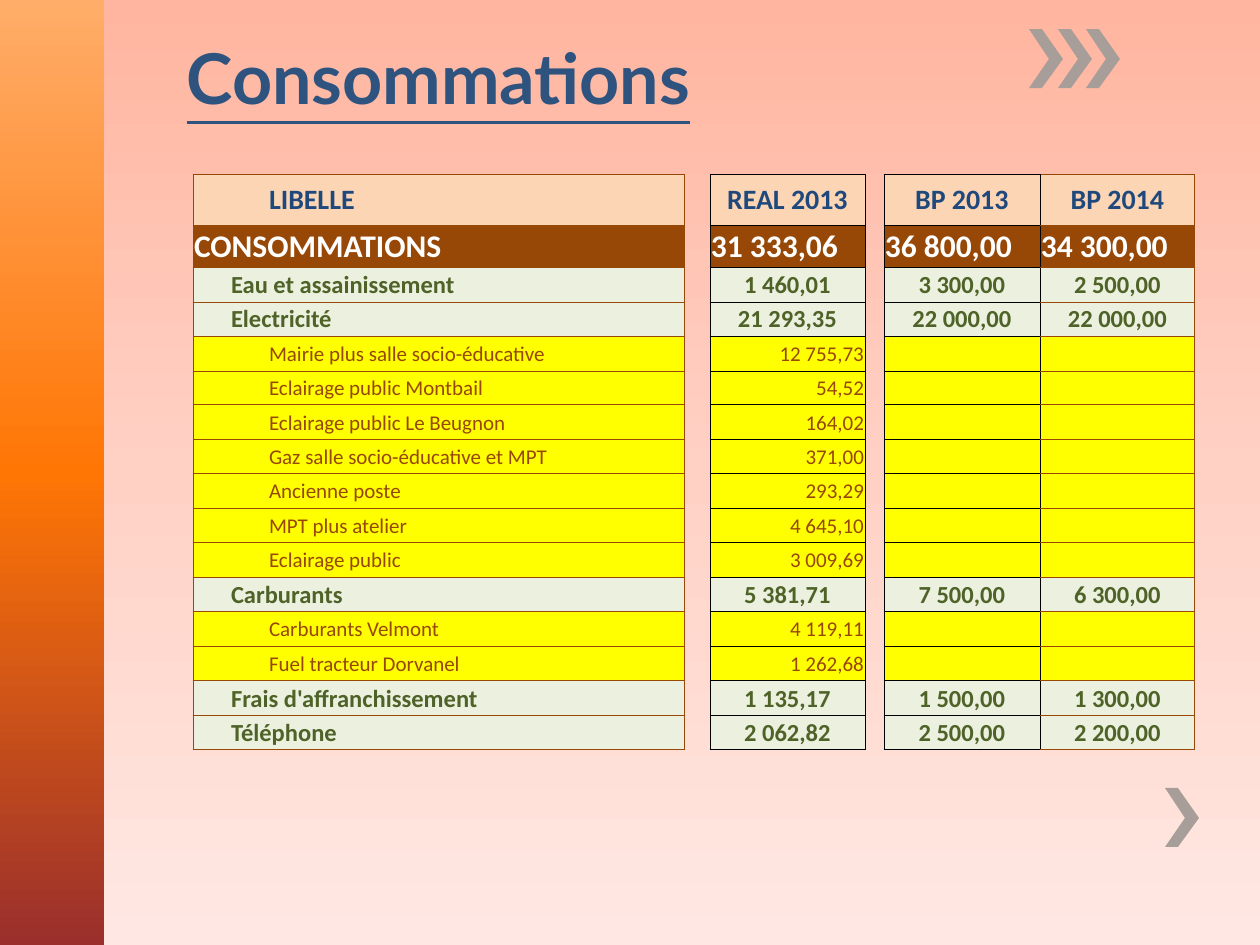
from dataclasses import dataclass

from lxml import etree
from pptx import Presentation
from pptx import util as u
from pptx.dml.color import RGBColor
from pptx.enum import shapes, text
from pptx.oxml.ns import qn

SCALE = 914400 / 126  # EMU in one px
LEFT, CENTER, RIGHT = text.PP_ALIGN.LEFT, text.PP_ALIGN.CENTER, text.PP_ALIGN.RIGHT


@dataclass(frozen=True)
class RowStyle:
    fill: str
    color: str
    size: int
    bold: bool
    indent: int
    align: text.PP_ALIGN


class Theme:
    title_font, table_font = "Lato", "Calibri"
    title_size, title_color = 40, "2F537F"
    background = ("FFB5A0", "FFD1C5", "FFE8E3")
    band = ("FFAD69", "FF7605", "9A2F2C")
    chevron = "A79D99"
    brown, black = "974706", "000000"
    border_width = 0.5
    rows = {
        "header": RowStyle("FCD5B4", "1F497D", 16, True, 76, CENTER),
        "total": RowStyle("974706", "FFFFFF", 18, True, 1, LEFT),
        "group": RowStyle("EBF1DE", "4F6228", 14, True, 38, CENTER),
        "detail": RowStyle("FFFF00", "974706", 12, False, 76, RIGHT),
    }


ROWS = [
    ("header", "LIBELLE", "REAL 2013", "BP 2013", "BP 2014"),
    ("total", "CONSOMMATIONS", "31 333,06", "36 800,00", "34 300,00"),
    ("group", "Eau et assainissement", "1 460,01", "3 300,00", "2 500,00"),
    ("group", "Electricité", "21 293,35", "22 000,00", "22 000,00"),
    ("detail", "Mairie plus salle socio-éducative", "12 755,73", "", ""),
    ("detail", "Eclairage public Montbail", "54,52", "", ""),
    ("detail", "Eclairage public Le Beugnon", "164,02", "", ""),
    ("detail", "Gaz salle socio-éducative et MPT", "371,00", "", ""),
    ("detail", "Ancienne poste", "293,29", "", ""),
    ("detail", "MPT plus atelier", "4 645,10", "", ""),
    ("detail", "Eclairage public", "3 009,69", "", ""),
    ("group", "Carburants", "5 381,71", "7 500,00", "6 300,00"),
    ("detail", "Carburants Velmont", "4 119,11", "", ""),
    ("detail", "Fuel tracteur Dorvanel", "1 262,68", "", ""),
    ("group", "Frais d'affranchissement", "1 135,17", "1 500,00", "1 300,00"),
    ("group", "Téléphone", "2 062,82", "2 500,00", "2 200,00"),
]
COLUMN_WIDTHS = [491, 26, 155, 19, 156, 155]
ROW_HEIGHTS = [51, 42] + [35, 34] * 7

# Border colours of each column: left, right, top, bottom
BROWN, BLACK = Theme.brown, Theme.black
COLUMN_BORDERS = [
    (BROWN,) * 4,
    (BROWN, BLACK, None, None),
    (BLACK,) * 4,
    (BLACK, BLACK, None, None),
    (BLACK,) * 4,
    (BLACK, BROWN, BROWN, BROWN),
]


def px(*lengths):
    return [u.Emu(round(length * SCALE)) for length in lengths]


class SlideBuilder:
    def __init__(self, presentation, theme):
        self.theme = theme
        self.slide = presentation.slides.add_slide(presentation.slide_layouts[5])

    def gradient(self, fill, element, colors):
        """Vertical gradient with evenly spaced stops."""
        fill.gradient()
        fill.gradient_angle = 270
        stops = element.find(".//" + qn("a:gsLst"))
        for stop in list(stops):
            stops.remove(stop)
        for index, color in enumerate(colors):
            position = index * 100000 // (len(colors) - 1)
            stop = etree.SubElement(stops, qn("a:gs"), pos=str(position))
            etree.SubElement(stop, qn("a:srgbClr"), val=color)

    def background(self, colors):
        self.gradient(self.slide.background.fill, self.slide.element, colors)

    def band(self, width, height):
        shape = self.slide.shapes.add_shape(
            shapes.MSO_SHAPE.RECTANGLE, *px(0, 0, width, height))
        shape.shadow.inherit = False
        shape.line.fill.background()
        self.gradient(shape.fill, shape.element, self.theme.band)

    def chevron(self, left, top):
        corners = [(13, 0), (0, 0), (20, 30), (0, 59), (13, 59), (34, 30)]
        points = [px(left + x, top + y) for x, y in corners]
        outline = self.slide.shapes.build_freeform(*points[0])
        outline.add_line_segments(points[1:], close=True)
        shape = outline.convert_to_shape()
        shape.shadow.inherit = False
        shape.line.fill.background()
        shape.fill.solid()
        shape.fill.fore_color.rgb = RGBColor.from_string(self.theme.chevron)

    def format_run(self, run, font, size, color, bold):
        run.font.name, run.font.size, run.font.bold = font, u.Pt(size), bold
        run.font.color.rgb = RGBColor.from_string(color)

    def title(self, wording, left, top, width, height):
        shape = self.slide.shapes.title
        shape.left, shape.top, shape.width, shape.height = px(left, top, width, height)
        frame = shape.text_frame
        frame.text = wording
        frame.auto_size = text.MSO_AUTO_SIZE.NONE
        frame.vertical_anchor = text.MSO_ANCHOR.TOP
        paragraph = frame.paragraphs[0]
        paragraph.alignment = LEFT
        run = paragraph.runs[0]
        theme = self.theme
        self.format_run(run, theme.title_font, theme.title_size, theme.title_color, True)
        run.font.underline = True

    def borders(self, cell, colors):
        properties = cell._tc.get_or_add_tcPr()
        width = str(u.Pt(self.theme.border_width))
        for side, color in zip("LRTB", colors):
            line = etree.SubElement(properties, qn("a:ln" + side), w=width)
            if color:
                fill = etree.SubElement(line, qn("a:solidFill"))
                etree.SubElement(fill, qn("a:srgbClr"), val=color)
            else:
                etree.SubElement(line, qn("a:noFill"))

    def cell(self, cell, wording, style, indent, align):
        cell.vertical_anchor = text.MSO_ANCHOR.MIDDLE
        cell.margin_left, cell.margin_top, cell.margin_right, cell.margin_bottom = px(indent, 1, 1, 0)
        paragraph = cell.text_frame.paragraphs[0]
        paragraph.alignment = align
        if wording:
            paragraph.text = wording
            self.format_run(paragraph.runs[0], self.theme.table_font, style.size, style.color, style.bold)
        else:  # keeps an empty cell from stretching its row
            etree.SubElement(paragraph._p, qn("a:endParaRPr"), sz=str(style.size * 100))

    def table(self, rows, left, top):
        frame = self.slide.shapes.add_table(
            len(rows), len(COLUMN_WIDTHS),
            *px(left, top, sum(COLUMN_WIDTHS), sum(ROW_HEIGHTS)))
        table = frame.table
        table.first_row = table.horz_banding = False
        for column, width in zip(table.columns, px(*COLUMN_WIDTHS)):
            column.width = width
        for row, height, (kind, label, actual, *budgets) in zip(table.rows, px(*ROW_HEIGHTS), rows):
            row.height = height
            style = self.theme.rows[kind]
            wordings = [label, None, actual, None, *budgets]  # None: gap column
            for index, (cell, wording) in enumerate(zip(row.cells, wordings)):
                self.borders(cell, COLUMN_BORDERS[index])
                if wording is None:
                    cell.fill.background()
                else:
                    cell.fill.solid()
                    cell.fill.fore_color.rgb = RGBColor.from_string(style.fill)
                indent, align = (style.indent, LEFT) if index == 0 else (1, style.align)
                self.cell(cell, wording, style, indent, align)


def main():
    presentation = Presentation()
    presentation.slide_width, presentation.slide_height = px(1260, 945)
    builder = SlideBuilder(presentation, Theme)

    # Backdrop
    builder.background(Theme.background)
    builder.band(104, 945)
    for left, top in [(1165, 788), (1029, 29), (1058, 29), (1086, 29)]:
        builder.chevron(left, top)

    # Content
    builder.title("Consommations", 174, 28, 853, 131)
    builder.table(ROWS, 193, 174)
    presentation.save("out.pptx")


if __name__ == "__main__":
    main()
